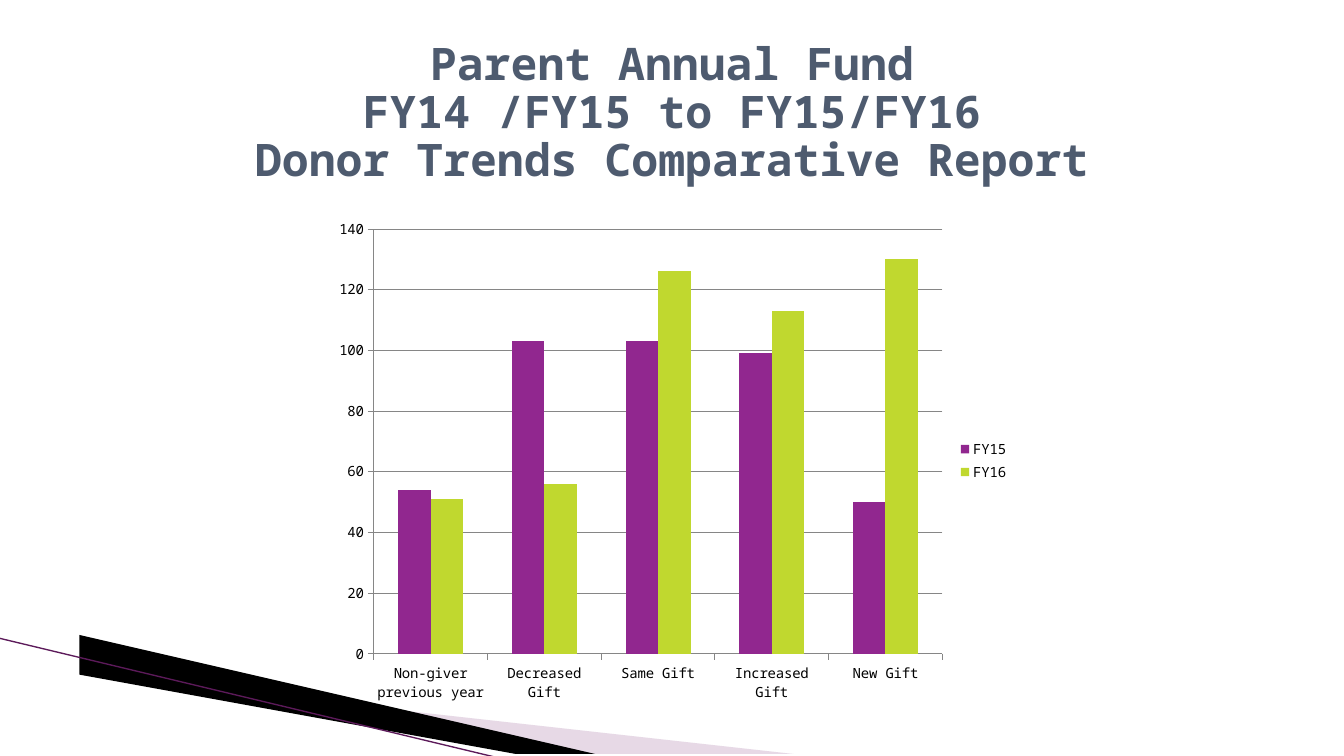
import dataclasses

import lxml.etree
import pptx
import pptx.chart.data
import pptx.dml.color
import pptx.enum.chart
import pptx.enum.shapes
import pptx.enum.text
import pptx.oxml.ns
import pptx.util
from pptx.util import Cm


@dataclasses.dataclass(frozen=True)
class Theme:
    """Colours, font and type sizes of the slide."""
    font: str = "Noto Sans Mono"
    head: str = "4E5B6F"
    text: str = "000000"
    grid: str = "868686"
    mauve: str = "C3A1C2"
    black: str = "000000"
    edge: str = "5C1A5A"
    bars: tuple = ("91278F", "C0D82F")
    big: int = 32
    small: int = 10


THEME = Theme()
HEAD = ("Parent Annual Fund", "FY14 /FY15 to FY15/FY16",
        "Donor Trends Comparative Report")
GIFTS = ("Non-giver previous year", "Decreased Gift", "Same Gift",
         "Increased Gift", "New Gift")
YEARS = {"FY15": (54, 103, 103, 99, 50), "FY16": (51, 56, 126, 113, 130)}


def tint(code):
    """Return the colour for a hex code."""
    return pptx.dml.color.RGBColor.from_string(code)


def add_node(parent, tag):
    """Append an empty XML element and return it."""
    return lxml.etree.SubElement(parent, pptx.oxml.ns.qn(tag))


def style(font, size, code, bold=False):
    """Set face, size, colour and weight of a font."""
    font.name = THEME.font
    font.size = pptx.util.Pt(size)
    font.bold = bold
    font.color.rgb = tint(code)


def add_wedge(slide, points, code, alpha=None):
    """Draw a filled outline through points given in centimetres."""
    pen = slide.shapes.build_freeform(*points[0], scale=Cm(1))
    pen.add_line_segments(points[1:])
    wedge = pen.convert_to_shape()
    wedge.shadow.inherit = False
    wedge.fill.solid()
    wedge.fill.fore_color.rgb = tint(code)
    wedge.line.fill.background()
    if alpha is not None:
        props = wedge._element.spPr
        tone = props.find(".//" + pptx.oxml.ns.qn("a:srgbClr"))
        add_node(tone, "a:alpha").set("val", str(alpha * 1000))


def add_edge(slide, start, end):
    """Draw the thin slanted line."""
    kind = pptx.enum.shapes.MSO_CONNECTOR.STRAIGHT
    ends = [Cm(x) for x in (*start, *end)]
    edge = slide.shapes.add_connector(kind, *ends)
    edge.line.color.rgb = tint(THEME.edge)
    edge.line.width = pptx.util.Pt(0.95)
    add_node(edge._element.spPr, "a:effectLst")


def set_title(slide, lines):
    """Place and fill the title."""
    title = slide.shapes.title
    title.left, title.top = Cm(5.51), Cm(0.43)
    title.width, title.height = Cm(22.86), Cm(4.88)
    frame = title.text_frame
    frame.word_wrap = True
    frame.auto_size = pptx.enum.text.MSO_AUTO_SIZE.NONE
    frame.vertical_anchor = pptx.enum.text.MSO_ANCHOR.MIDDLE
    para = frame.paragraphs[0]
    para.alignment = pptx.enum.text.PP_ALIGN.CENTER
    para.line_spacing = 0.89
    for index, line in enumerate(lines):
        if index:
            para.add_line_break()
        run = para.add_run()
        run.text = line
        style(run.font, THEME.big, THEME.head, True)


def set_axis(axis):
    """Give an axis its line and outer ticks."""
    axis.format.line.color.rgb = tint(THEME.grid)
    axis.format.line.width = pptx.util.Pt(0.75)
    axis.major_tick_mark = pptx.enum.chart.XL_TICK_MARK.OUTSIDE
    axis.minor_tick_mark = pptx.enum.chart.XL_TICK_MARK.NONE


def add_bars(slide):
    """Add the chart of gifts by year."""
    data = pptx.chart.data.CategoryChartData()
    data.categories = GIFTS
    for year, counts in YEARS.items():
        data.add_series(year, counts)
    kind = pptx.enum.chart.XL_CHART_TYPE.COLUMN_CLUSTERED
    chart = slide.shapes.add_chart(
        kind, Cm(8.2), Cm(5.28), Cm(17.48), Cm(12.65), data).chart
    style(chart.font, THEME.small, THEME.text)
    chart.has_title = False
    chart.has_legend = True
    chart.legend.position = pptx.enum.chart.XL_LEGEND_POSITION.RIGHT
    chart.legend.include_in_layout = False
    plot = chart.plots[0]
    plot.gap_width = 150
    plot.overlap = 0
    plot.vary_by_categories = False
    for series, code in zip(plot.series, THEME.bars):
        series.format.fill.solid()
        series.format.fill.fore_color.rgb = tint(code)
    set_axis(chart.category_axis)
    scale = chart.value_axis
    set_axis(scale)
    scale.minimum_scale, scale.maximum_scale = 0, 140
    scale.major_unit = 20
    scale.has_major_gridlines = True
    rule = scale.major_gridlines.format.line
    rule.color.rgb = tint(THEME.grid)
    rule.width = pptx.util.Pt(0.75)


def main():
    """Build and save the slide."""
    deck = pptx.Presentation()
    deck.slide_width, deck.slide_height = Cm(33.87), Cm(19.05)
    slide = deck.slides.add_slide(deck.slide_layouts[5])
    add_wedge(slide, [(1.85, 16.54), (20.14, 19.08), (15.44, 19.08),
                      (1.85, 16.51)], THEME.mauve, 40)
    add_wedge(slide, [(1.8, 16.48), (15.47, 19.08), (12.6, 19.1),
                      (1.83, 16.51)], THEME.black)
    add_edge(slide, (-0.03, 16.08), (12.57, 19.1))
    set_title(slide, HEAD)
    add_bars(slide)
    deck.save("out.pptx")


if __name__ == "__main__":
    main()
